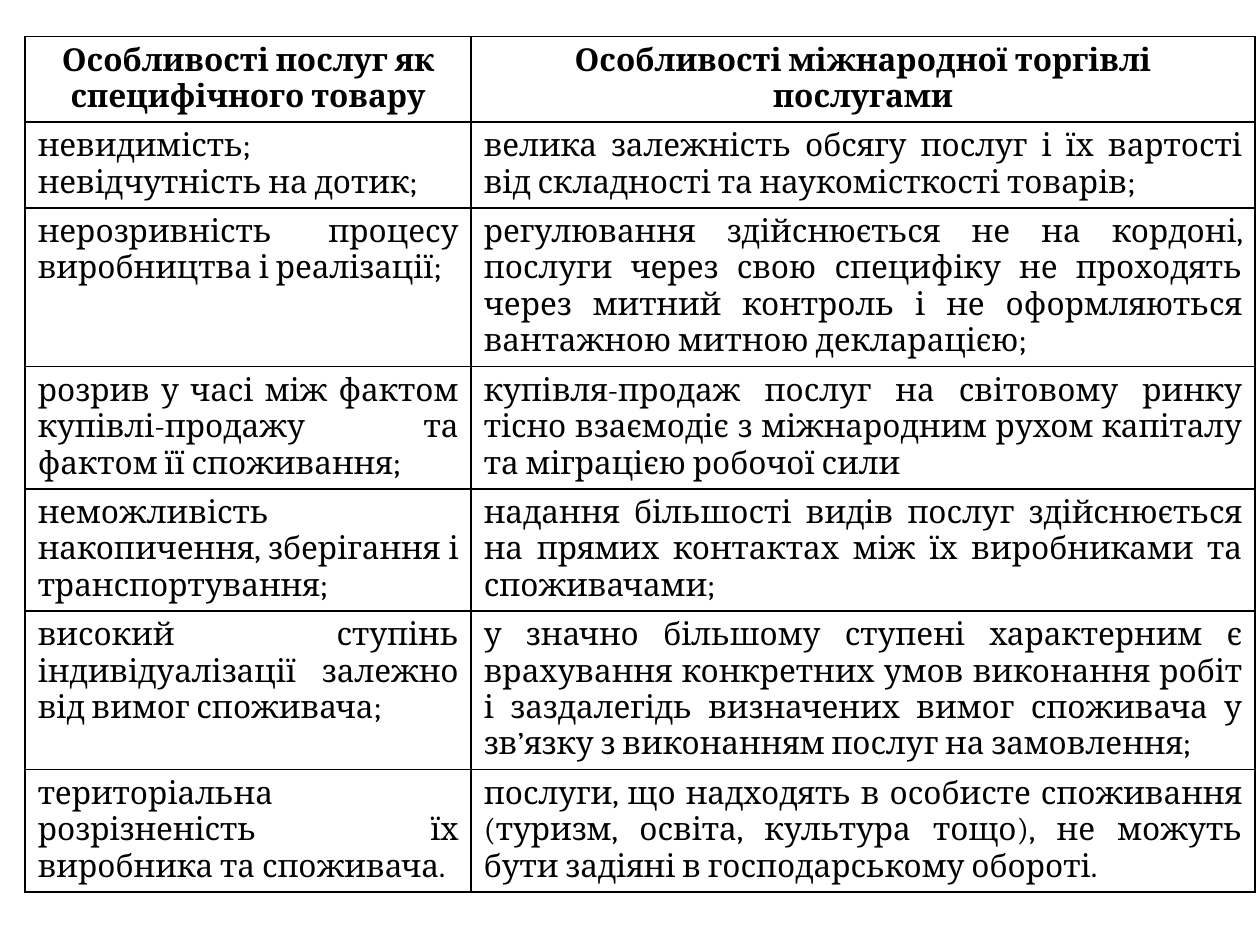
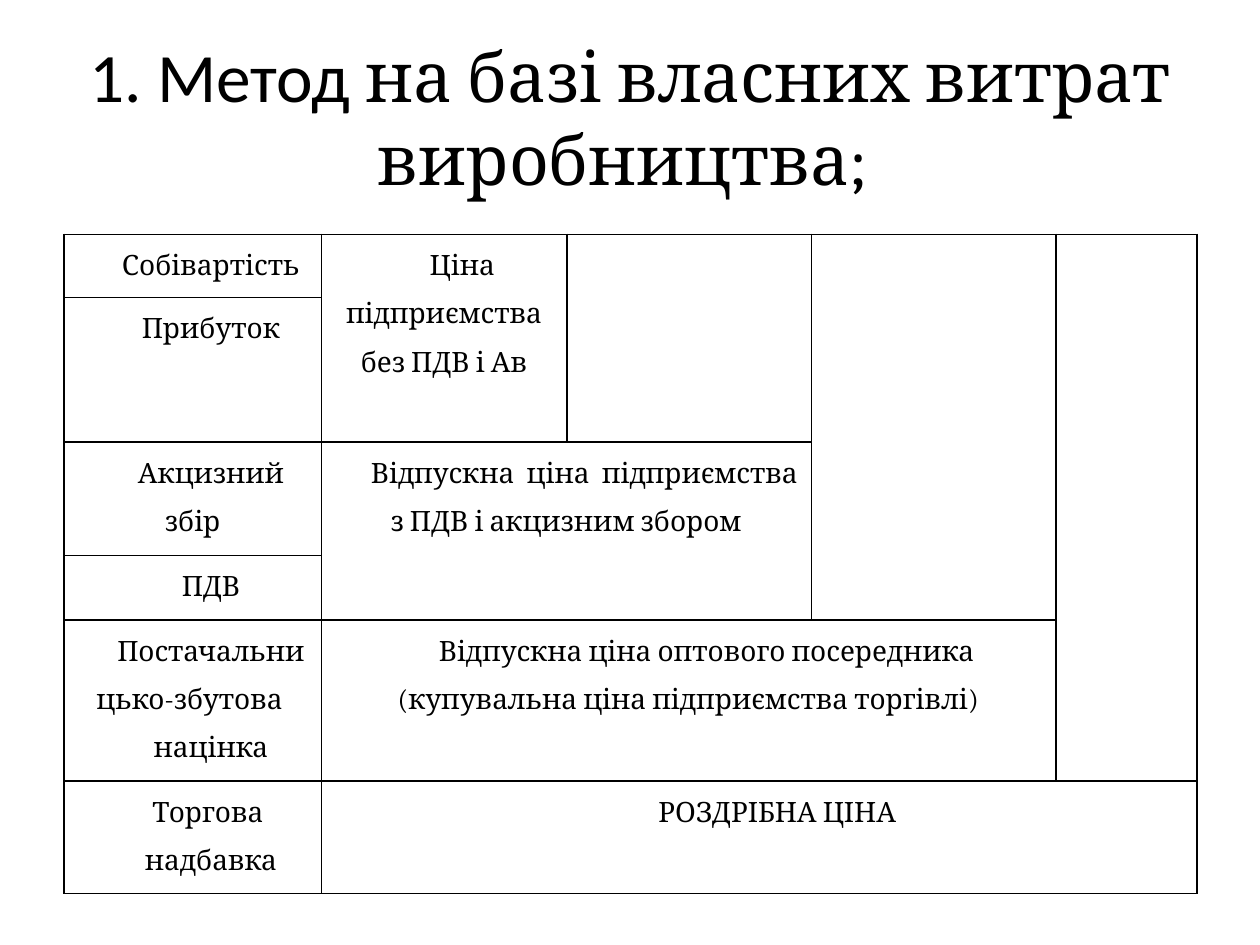
from lxml import etree
from pptx import Presentation
from pptx.dml.color import RGBColor
from pptx.enum.text import MSO_ANCHOR, PP_ALIGN
from pptx.oxml.ns import qn
from pptx.util import Inches, Pt

CENTER, JUSTIFY = PP_ALIGN.CENTER, PP_ALIGN.JUSTIFY
MIDDLE = MSO_ANCHOR.MIDDLE
TITLE_ONLY, BLANK = 5, 6
INK = "000000"
SERIF, SANS = "Cambria", "Calibri"

# Slide 1: (service feature, trade feature, lines of text in the row)
FEATURES = [
    ("Особливості послуг як специфічного товару",
     "Особливості міжнародної торгівлі послугами", 2),
    ("невидимість; невідчутність на дотик;",
     "велика залежність обсягу послуг і їх вартості від складності та "
     "наукомісткості товарів;", 2),
    ("нерозривність процесу виробництва і реалізації;",
     "регулювання здійснюється не на кордоні, послуги через свою специфіку "
     "не проходять через митний контроль і не оформляються вантажною митною "
     "декларацією;", 4),
    ("розрив у часі між фактом купівлі-продажу та фактом її споживання;",
     "купівля-продаж послуг на світовому ринку тісно взаємодіє з міжнародним "
     "рухом капіталу та міграцією робочої сили", 3),
    ("неможливість накопичення, зберігання і транспортування;",
     "надання більшості видів послуг здійснюється на прямих контактах між їх "
     "виробниками та споживачами;", 3),
    ("високий ступінь індивідуалізації залежно від вимог споживача;",
     "у значно більшому ступені характерним є врахування конкретних умов "
     "виконання робіт і заздалегідь визначених вимог споживача у зв’язку з "
     "виконанням послуг на замовлення;", 4),
    ("територіальна розрізненість їх виробника та споживача.",
     "послуги, що надходять в особисте споживання (туризм, освіта, культура "
     "тощо), не можуть бути задіяні в господарському обороті.", 3),
]
FEATURE_COLUMNS = [3.54, 6.22]

# Slide 2: cost components (paragraphs, row height) and the prices they add up to
TITLE = [("1. Метод ", SANS), ("на базі власних витрат виробництва; ", SERIF)]
COMPONENTS = [
    (["Собівартість"], 0.5),
    (["Прибуток"], 1.15),
    (["Акцизний збір"], 0.9),
    (["ПДВ"], 0.51),
    (["Постачальницько-збутова ", "націнка"], 1.28),
    (["Торгова ", "надбавка"], 0.89),
]
PRICE_COLUMNS = [2.04, 1.95, 1.94, 1.94, 1.12]
# (row, column, rows spanned, columns spanned, text)
PRICES = [
    (0, 1, 2, 1, "Ціна підприємства без ПДВ і Ав"),
    (0, 2, 2, 1, ""),
    (0, 3, 4, 1, ""),
    (0, 4, 5, 1, ""),
    (2, 1, 2, 2, "Відпускна  ціна  підприємства з ПДВ і акцизним збором"),
    (4, 1, 1, 3, "Відпускна ціна оптового посередника "
                 "(купувальна ціна підприємства торгівлі)"),
    (5, 1, 1, 4, "РОЗДРІБНА ЦІНА"),
]


def color(value):
    return RGBColor.from_string(value)


def add_span(para, text, size, font=SERIF, bold=False):
    span = para.add_run()
    span.text = text
    span.font.size, span.font.name, span.font.bold = Pt(size), font, bold
    span.font.color.rgb = color(INK)


def draw_borders(cell):
    properties = cell._tc.get_or_add_tcPr()
    for side in ("a:lnL", "a:lnR", "a:lnT", "a:lnB"):
        line = etree.SubElement(properties, qn(side), w=str(Pt(1)))
        fill = etree.SubElement(line, qn("a:solidFill"))
        etree.SubElement(fill, qn("a:srgbClr"), val=INK)


def add_grid(page, left, top, widths, heights):
    """Add a plain table with thin black borders."""
    frame = page.shapes.add_table(len(heights), len(widths), Inches(left), Inches(top),
                                  Inches(sum(widths)), Inches(sum(heights)))
    table = frame.table
    table.first_row = table.horz_banding = False
    for column, width in zip(table.columns, widths):
        column.width = Inches(width)
    for row, height in zip(table.rows, heights):
        row.height = Inches(height)
    for cell in table.iter_cells():
        draw_borders(cell)
        cell.fill.background()
    return table


def write_price_cell(cell, texts):
    """Centred, widely spaced paragraphs with a first-line indent."""
    cell.margin_left = cell.margin_right = Inches(0.07)
    cell.margin_top = cell.margin_bottom = 0
    for index, text in enumerate(texts):
        paras = cell.text_frame
        para = paras.add_paragraph() if index else paras.paragraphs[0]
        para.alignment, para.line_spacing = CENTER, 1.5
        indent = para._p.get_or_add_pPr()
        indent.set("marL", "0")
        indent.set("indent", str(Inches(0.29)))
        add_span(para, text, 16)


def build_features(deck):
    page = deck.slides.add_slide(deck.slide_layouts[BLANK])
    heights = [0.1 + 0.29 * lines for *_, lines in FEATURES]
    table = add_grid(page, 0.2, 0.29, FEATURE_COLUMNS, heights)
    for row, (*texts, _) in enumerate(FEATURES):
        header = row == 0
        for column, text in enumerate(texts):
            para = table.cell(row, column).text_frame.paragraphs[0]
            para.alignment = CENTER if header else JUSTIFY
            add_span(para, text, 18, bold=header)


def build_prices(deck):
    page = deck.slides.add_slide(deck.slide_layouts[TITLE_ONLY])
    title = page.shapes.title
    title.left, title.top = Inches(0.5), Inches(0.3)
    title.width, title.height = Inches(9), Inches(1.25)
    title.text_frame.vertical_anchor = MIDDLE
    title.text_frame.word_wrap = True
    para = title.text_frame.paragraphs[0]
    para.alignment = CENTER
    for text, font in TITLE:
        add_span(para, text, 39.6, font)

    heights = [height for _, height in COMPONENTS]
    table = add_grid(page, 0.51, 1.86, PRICE_COLUMNS, heights)
    for row, (texts, _) in enumerate(COMPONENTS):
        write_price_cell(table.cell(row, 0), texts)
    for row, column, rows, columns, text in PRICES:
        cell = table.cell(row, column)
        cell.merge(table.cell(row + rows - 1, column + columns - 1))
        if text:
            write_price_cell(cell, [text])


def main():
    deck = Presentation()
    deck.slide_width, deck.slide_height = Inches(10), Inches(7.5)
    build_features(deck)
    build_prices(deck)
    deck.save("out.pptx")


if __name__ == "__main__":
    main()
